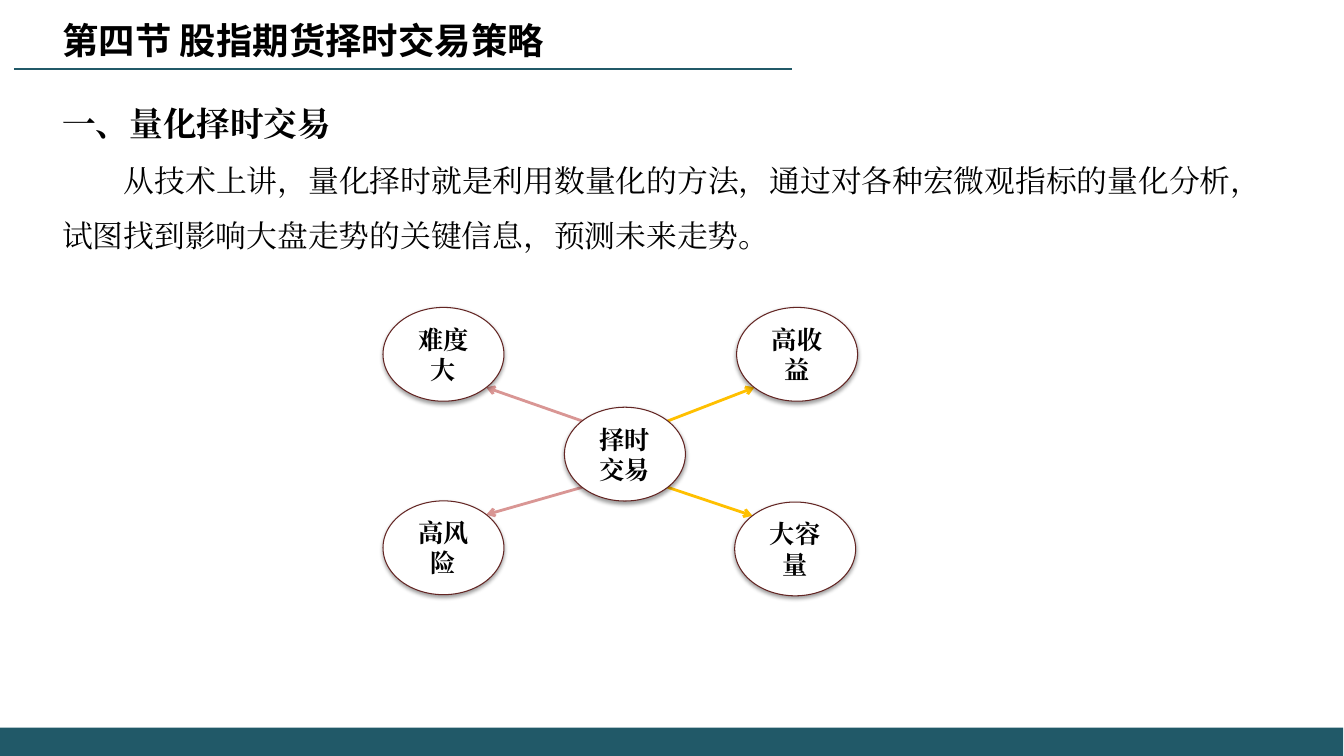
from math import sqrt
from pptx import Presentation
from pptx.dml.color import RGBColor as RGB
from pptx.enum.lang import MSO_LANGUAGE_ID as LANG
from pptx.enum.shapes import MSO_CONNECTOR as LINE, MSO_SHAPE as SHAPE
from pptx.enum.text import MSO_ANCHOR as ANCHOR, PP_ALIGN as ALIGN
from pptx.oxml import parse_xml
from pptx.oxml.ns import nsdecls
from pptx.util import Pt

TEAL = RGB(0x21, 0x59, 0x68)
BLACK = RGB(0, 0, 0)
WHITE = RGB(255, 255, 255)
MAROON = RGB(0x63, 0x25, 0x23)
GOLD = RGB(0xFF, 0xC0, 0x00)
ROSE = RGB(0xD9, 0x96, 0x94)
NODE_W, NODE_H = 86.4, 67


def write(para, text, size=18, bold=True, face="Times New Roman",
          align=ALIGN.LEFT, space=1.0, indent=0):
    """Put one formatted run of text in a paragraph."""
    para.alignment = align
    para.line_spacing = space
    if indent:
        para._p.get_or_add_pPr().set("indent", str(Pt(indent)))
    run = para.add_run()
    run.text = text
    font = run.font
    font.size, font.bold, font.name = Pt(size), bold, face
    font.language_id = LANG.SIMPLIFIED_CHINESE
    font.color.rgb = BLACK
    run._r.rPr.append(parse_xml(f'<a:ea {nsdecls("a")} typeface="{face}"/>'))


def add_line(slide, start, end, color, width, arrow=False):
    """Draw a straight line, with an arrowhead at its end if asked."""
    line = slide.shapes.add_connector(
        LINE.STRAIGHT, *[Pt(v) for v in (*start, *end)])
    line.line.color.rgb = color
    line.line.width = Pt(width)
    if arrow:
        line.line._get_or_add_ln().append(
            parse_xml(f'<a:tailEnd {nsdecls("a")} type="arrow"/>'))
    line._element.spPr.append(parse_xml(f'<a:effectLst {nsdecls("a")}/>'))


def add_title(slide, left, top, width, height):
    """Place the section title and the rule under it."""
    title = slide.shapes.title
    title.left, title.top = Pt(left), Pt(top)
    title.width, title.height = Pt(width), Pt(height)
    frame = title.text_frame
    frame.word_wrap = True
    frame.vertical_anchor = ANCHOR.TOP
    write(frame.paragraphs[0], "第四节 股指期货择时交易策略", size=26,
          face="Noto Sans CJK SC")
    rule = top + height + 0.7
    add_line(slide, (left - 27.4, rule), (left + 528.5, rule), TEAL, 1.5)


def add_body(slide, left, top, width, height):
    """Place the heading and its explanation."""
    box = slide.shapes.add_textbox(Pt(left), Pt(top), Pt(width), Pt(height))
    frame = box.text_frame
    frame.word_wrap = True
    write(frame.paragraphs[0], "一、量化择时交易", size=24, space=1.5)
    write(frame.add_paragraph(),
          "从技术上讲，量化择时就是利用数量化的方法，通过对各种宏微观指标的"
          "量化分析，试图找到影响大盘走势的关键信息，预测未来走势。",
          size=22, bold=False, space=1.5, indent=44)


def add_node(slide, text, left, top):
    """Draw one labelled ellipse with a soft shadow."""
    node = slide.shapes.add_shape(
        SHAPE.OVAL, Pt(left), Pt(top), Pt(NODE_W), Pt(NODE_H))
    node.fill.solid()
    node.fill.fore_color.rgb = WHITE
    node.line.color.rgb = MAROON
    node.line.width = Pt(0.75)
    node.shadow.inherit = False
    node._element.spPr.find(
        "{http://schemas.openxmlformats.org/drawingml/2006/main}effectLst"
    ).append(parse_xml(
        f'<a:outerShdw {nsdecls("a")} blurRad="{Pt(3.1)}" dist="{Pt(1.6)}" '
        'dir="5400000" rotWithShape="0"><a:srgbClr val="000000">'
        '<a:alpha val="38000"/></a:srgbClr></a:outerShdw>'))
    frame = node.text_frame
    frame.word_wrap = True
    frame.vertical_anchor = ANCHOR.MIDDLE
    write(frame.paragraphs[0], text, align=ALIGN.CENTER)


def add_map(slide, left, top):
    """Draw the hub, its four traits and the arrows between them."""
    hub = (left + 129.6, top + 71.3)
    traits = [("高收益", 252.6, 0, 1, -1, GOLD),
              ("大容量", 251.2, 139, 1, 1, GOLD),
              ("高风险", 0, 138.2, -1, 1, ROSE),
              ("难度大", 0, 0, -1, -1, ROSE)]
    mid_x, mid_y = NODE_W / 2, NODE_H / 2
    for text, dx, dy, side, row, color in traits:
        x, y = left + dx, top + dy
        reach_x, reach_y = side * mid_x / sqrt(2), row * mid_y / sqrt(2)
        add_line(slide,
                 (hub[0] + mid_x + reach_x, hub[1] + mid_y + reach_y),
                 (x + mid_x - reach_x, y + mid_y - reach_y),
                 color, 2, arrow=True)
        add_node(slide, text, x, y)
    add_node(slide, "择时交易", *hub)


def add_foot(slide, left, top, width, height):
    """Draw the band along the bottom edge."""
    band = slide.shapes.add_shape(
        SHAPE.RECTANGLE, Pt(left), Pt(top), Pt(width), Pt(height))
    band.fill.solid()
    band.fill.fore_color.rgb = TEAL
    band.line.fill.background()
    band.shadow.inherit = False


def main():
    """Build and save the slide."""
    deck = Presentation()
    deck.slide_width, deck.slide_height = Pt(960), Pt(540)
    slide = deck.slides.add_slide(deck.slide_layouts[5])
    add_foot(slide, 0, 519.8, 959.4, 20.2)
    add_title(slide, 37.4, 9.4, 415.4, 38.9)
    add_body(slide, 37.4, 55.4, 884.2, 126)
    add_map(slide, 273.6, 219.6)
    deck.save("out.pptx")


if __name__ == "__main__":
    main()
